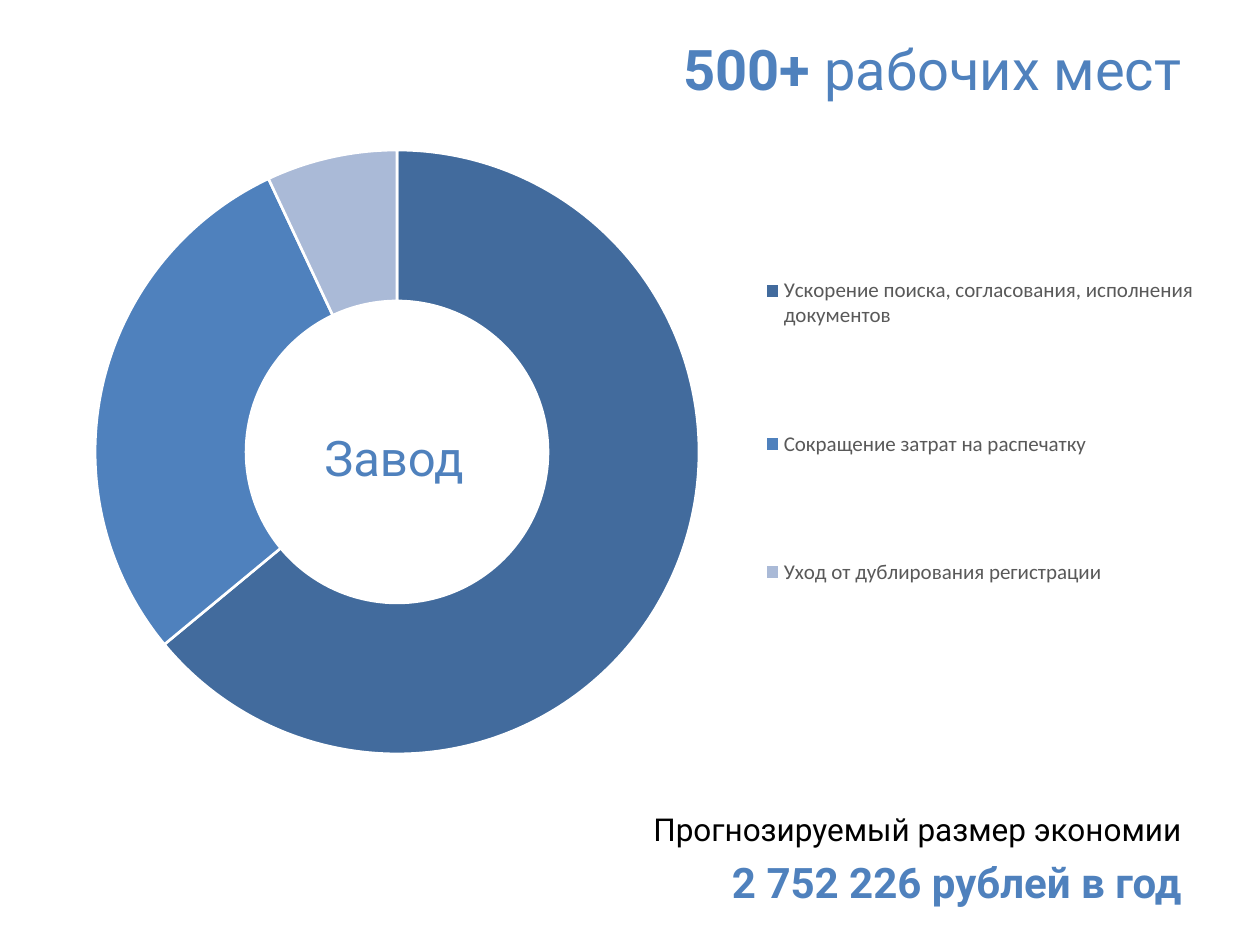
import pptx
import pptx.chart.data
import pptx.dml.color
import pptx.enum.chart
import pptx.enum.text
import pptx.util
import lxml.etree

EMU_PER_PX = 914400 / 126
BLUE = "4F81BD"
ALIGN = pptx.enum.text.PP_ALIGN
CHART_NS = "http://schemas.openxmlformats.org/drawingml/2006/chart"

SAVINGS = [
    ("Ускорение поиска, согласования, исполнения документов", 64, "426B9D"),
    ("Сокращение затрат на распечатку", 29, BLUE),
    ("Уход от дублирования регистрации", 7, "AABAD7"),
]


def px(length):
    return pptx.util.Emu(round(length * EMU_PER_PX))


def color(value):
    return pptx.dml.color.RGBColor.from_string(value)


def set_font(font, name, size, fill):
    font.name = name
    font.size = pptx.util.Pt(size)
    font.color.rgb = color(fill)


def add_text(page, box, align, lines):
    """Each line is (space before in points, [(text, size, colour, bold)])."""
    frame = page.shapes.add_textbox(*map(px, box)).text_frame
    frame.word_wrap = True
    for index, (space, spans) in enumerate(lines):
        para = frame.add_paragraph() if index else frame.paragraphs[0]
        para.alignment = align
        para.space_before = pptx.util.Pt(space)
        for text, size, fill, bold in spans:
            span = para.add_run()
            span.text = text
            span.font.bold = bold
            set_font(span.font, "Roboto", size, fill)


def set_layout(parent, box, area, position, inner=False):
    """Fix a chart part at an area in px, relative to the chart box."""
    for old in parent.findall(f"{{{CHART_NS}}}layout"):
        parent.remove(old)
    layout = lxml.etree.Element(f"{{{CHART_NS}}}layout")
    manual = lxml.etree.SubElement(layout, f"{{{CHART_NS}}}manualLayout")
    settings = [("layoutTarget", "inner")] if inner else []
    settings += [("xMode", "edge"), ("yMode", "edge")]
    settings += [(key, f"{area[i] / box[2 + i % 2]:.4f}")
                 for i, key in enumerate("xywh")]
    for tag, value in settings:
        lxml.etree.SubElement(manual, f"{{{CHART_NS}}}{tag}").set("val", value)
    parent.insert(position, layout)


def add_doughnut(page, box):
    data = pptx.chart.data.CategoryChartData()
    data.categories = [name for name, _, _ in SAVINGS]
    data.add_series("Series 1", [share for _, share, _ in SAVINGS])
    chart = page.shapes.add_chart(
        pptx.enum.chart.XL_CHART_TYPE.DOUGHNUT, *map(px, box), data).chart
    chart.has_title = False
    set_font(chart.font, "Calibri", 10, "000000")

    # Ring
    plot = chart.plots[0]
    plot.vary_by_categories = True
    plot._element.find(f"{{{CHART_NS}}}holeSize").set("val", "50")
    for index, (_, _, fill) in enumerate(SAVINGS):
        style = plot.series[0].points[index].format
        style.fill.solid()
        style.fill.fore_color.rgb = color(fill)
        style.line.color.rgb = color("FFFFFF")
        style.line.width = pptx.util.Pt(1.5)
    set_layout(plot._element.getparent(), box, (415, 228, 712, 604), 0, True)

    # Legend
    chart.has_legend = True
    legend = chart.legend
    legend.position = pptx.enum.chart.XL_LEGEND_POSITION.BOTTOM
    legend.include_in_layout = False
    set_font(legend.font, "Calibri", 12, "595959")
    set_layout(legend._element, box, (1129, 253, 450, 513), 1)


def build_savings_page(page):
    # Forecast
    add_text(page, (60, 804, 1134, 97), ALIGN.RIGHT, [
        (3.6, [("Прогнозируемый размер экономии", 18, "000000", False)]),
        (4.8, [("2 752 226 рублей в год", 24, BLUE, True)]),
    ])
    # Savings by source
    add_doughnut(page, (-374, -78, 1615, 914))
    # Centre label
    add_text(page, (284, 421, 220, 72), ALIGN.CENTER,
             [(0, [("Завод", 28, BLUE, False)])])
    # Heading
    add_text(page, (620, 28, 574, 81), ALIGN.RIGHT,
             [(0, [("500+", 32, BLUE, True),
                   (" рабочих мест", 32, BLUE, False)])])


def main():
    deck = pptx.Presentation()
    deck.slide_width, deck.slide_height = px(1260), px(945)
    build_savings_page(deck.slides.add_slide(deck.slide_layouts[6]))
    deck.save("out.pptx")


if __name__ == "__main__":
    main()
